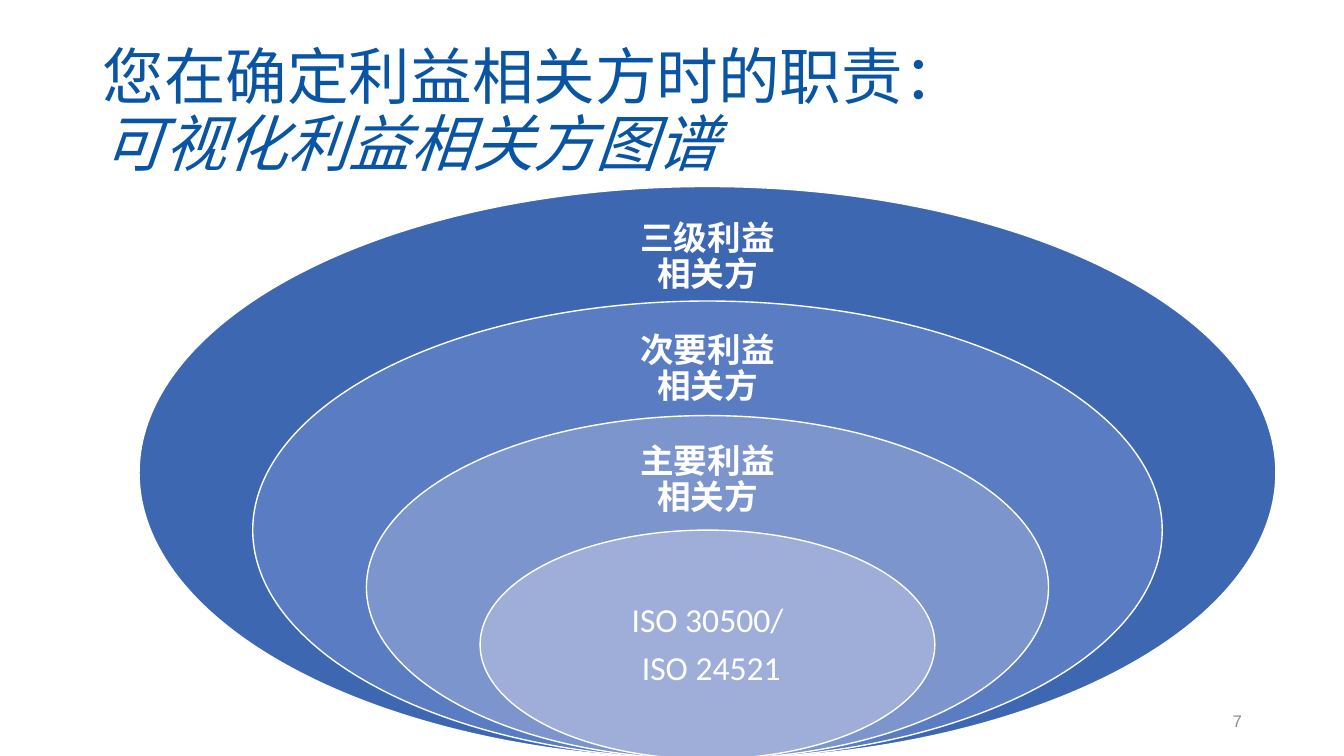
from pptx import Presentation
from pptx.dml.color import RGBColor
from pptx.enum.shapes import MSO_SHAPE
from pptx.enum.text import MSO_ANCHOR, MSO_AUTO_SIZE, PP_ALIGN
from pptx.util import Cm, Pt

ELLIPSE = MSO_SHAPE.OVAL
MIDDLE = MSO_ANCHOR.MIDDLE
NO_FIT = MSO_AUTO_SIZE.NONE
LEFT, CENTER, RIGHT = PP_ALIGN.LEFT, PP_ALIGN.CENTER, PP_ALIGN.RIGHT

TITLE_BLUE = RGBColor(0x0A, 0x55, 0xA3)
NUMBER_GREY = RGBColor(0x8C, 0x8C, 0x8C)
WHITE = RGBColor(0xFF, 0xFF, 0xFF)
RING_COLORS = (
    RGBColor(0x3E, 0x67, 0xB2),
    RGBColor(0x5A, 0x7C, 0xC3),
    RGBColor(0x7D, 0x95, 0xCD),
    RGBColor(0x9F, 0xAE, 0xD8),
)

# Label text, top, height and boldness, from the outer ring inwards
LABELS = (
    ("三级利益\v相关方", 5.41, 2.16, True),
    ("次要利益\v相关方", 8.28, 2.08, True),
    ("主要利益\v相关方", 11.13, 1.96, True),
    ("ISO 30500/\n ISO 24521", 14.81, 2.9, False),
)
RING_CENTER, RING_BOTTOM = 17.83, 19.13
RING_WIDTH, RING_HEIGHT = 28.65, 14.43
RING_STEP = 0.2
LABEL_WIDTH = 8


def format_text(frame, font_name, size, color, alignment, bold=False):
    frame.word_wrap = True
    frame.auto_size = NO_FIT
    frame.vertical_anchor = MIDDLE
    for para in frame.paragraphs:
        para.alignment = alignment
        for span in para.runs:
            span.font.name = font_name
            span.font.size = Pt(size)
            span.font.bold = bold
            span.font.color.rgb = color


def set_title(page, text):
    """Fill the title placeholder; its second line is italic."""
    title = page.shapes.title
    title.left, title.top = Cm(2.33), Cm(1.01)
    title.width, title.height = Cm(29.21), Cm(3.68)
    frame = title.text_frame
    frame.text = text
    format_text(frame, "Arial", 44, TITLE_BLUE, LEFT)
    para = frame.paragraphs[0]
    para.line_spacing = 0.9
    para.runs[1].font.italic = True


def add_ring(page, scale, color):
    """Add an ellipse that shares its lowest point with the other rings."""
    width, height = RING_WIDTH * scale, RING_HEIGHT * scale
    ring = page.shapes.add_shape(
        ELLIPSE, Cm(RING_CENTER - width / 2), Cm(RING_BOTTOM - height),
        Cm(width), Cm(height))
    ring.shadow.inherit = False
    ring.fill.solid()
    ring.fill.fore_color.rgb = color
    ring.line.color.rgb = WHITE
    ring.line.width = Pt(1)


def add_label(page, text, top, height, bold):
    box = page.shapes.add_textbox(
        Cm(RING_CENTER - LABEL_WIDTH / 2), Cm(top), Cm(LABEL_WIDTH), Cm(height))
    frame = box.text_frame
    frame.margin_left = frame.margin_right = Cm(0.48)
    frame.margin_top = frame.margin_bottom = Cm(0.48)
    frame.text = text
    format_text(frame, "Calibri", 24, WHITE, CENTER, bold)
    for para in frame.paragraphs:
        para.line_spacing = 0.9
        para.space_after = Pt(8.4)


def add_page_number(page, number):
    box = page.shapes.add_textbox(Cm(23.93), Cm(17.65), Cm(7.62), Cm(1.02))
    box.text_frame.text = number
    format_text(box.text_frame, "Arial", 12, NUMBER_GREY, RIGHT)


def main():
    deck = Presentation()
    deck.slide_width, deck.slide_height = Cm(33.87), Cm(19.05)
    page = deck.slides.add_slide(deck.slide_layouts[5])
    set_title(page, "您在确定利益相关方时的职责：\v可视化利益相关方图谱")
    add_page_number(page, "7")
    for index, (color, label) in enumerate(zip(RING_COLORS, LABELS)):
        add_ring(page, 1 - index * RING_STEP, color)
        add_label(page, *label)
    deck.save("out.pptx")


if __name__ == "__main__":
    main()
